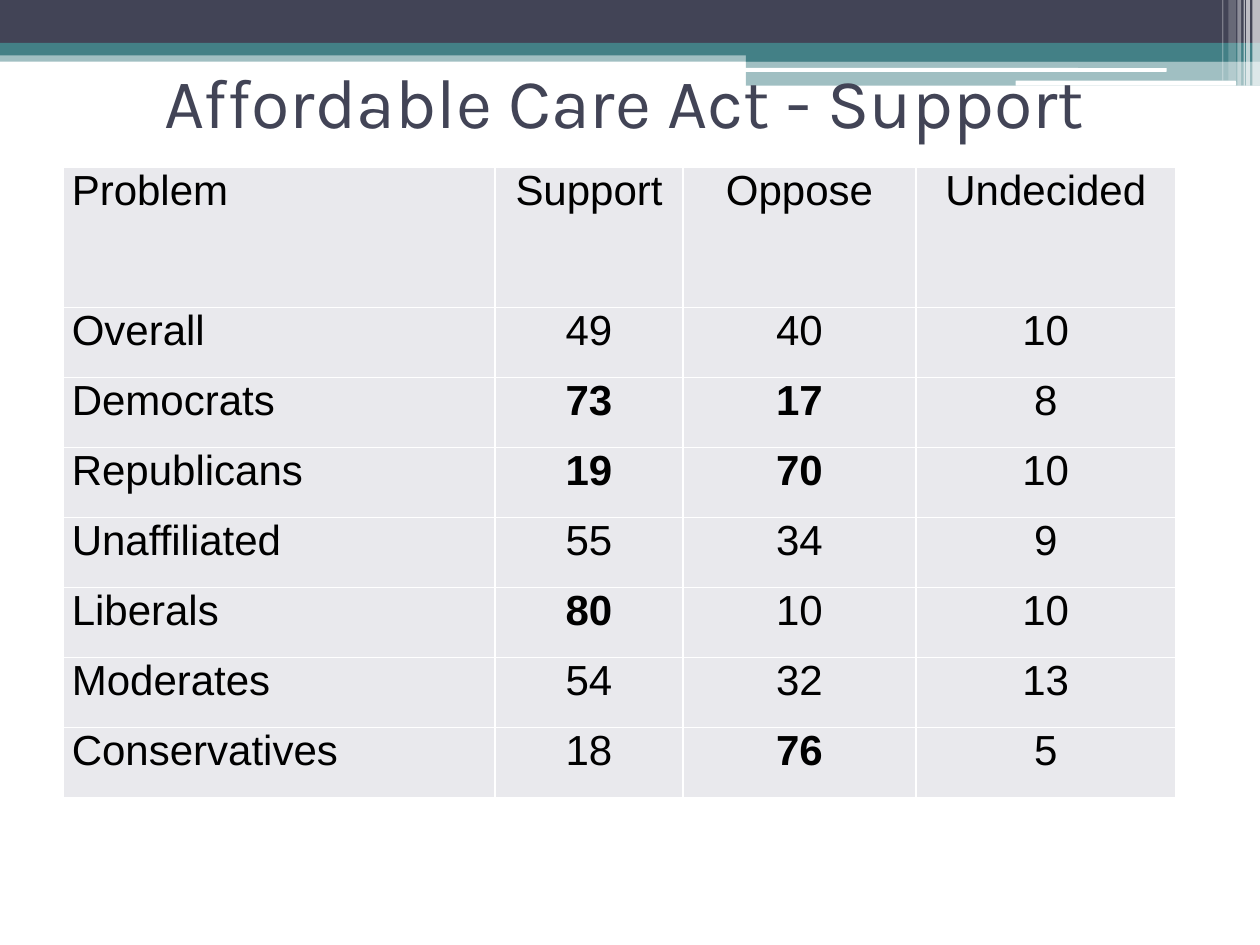
"""Builds a slide with a table of Affordable Care Act support by group."""
from lxml import etree
from pptx import Presentation
from pptx.dml.color import RGBColor
from pptx.enum.shapes import MSO_SHAPE
from pptx.enum.text import MSO_ANCHOR, PP_ALIGN
from pptx.oxml.ns import qn
from pptx.util import Inches, Pt

RECT, ROUND = MSO_SHAPE.RECTANGLE, MSO_SHAPE.ROUNDED_RECTANGLE
LEFT, CENTER = PP_ALIGN.LEFT, PP_ALIGN.CENTER
MIDDLE = MSO_ANCHOR.MIDDLE
NAVY = RGBColor(0x42, 0x44, 0x56)
TEAL = RGBColor(0x43, 0x80, 0x86)
WHITE = RGBColor(0xFF, 0xFF, 0xFF)
BLACK = RGBColor(0, 0, 0)
PALE = RGBColor(0xE9, 0xE9, 0xED)

TITLE = "Affordable Care Act - Support"
HEADER = ("Problem", "Support", "Oppose", "Undecided")
ROWS = [
    ("Overall", 49, 40, 10),
    ("Democrats", 73, 17, 8),
    ("Republicans", 19, 70, 10),
    ("Unaffiliated", 55, 34, 9),
    ("Liberals", 80, 10, 10),
    ("Moderates", 54, 32, 13),
    ("Conservatives", 18, 76, 5),
]
BOLD = {("Democrats", 1), ("Democrats", 2), ("Republicans", 1),
        ("Republicans", 2), ("Liberals", 1), ("Conservatives", 2)}
COL_WIDTHS = (3.43, 1.49, 1.85, 2.06)
TABLE_LEFT, TABLE_TOP, TABLE_HEIGHT, HEADER_HEIGHT = 0.5, 1.33, 5, 1.11

BANDS = [
    (RECT, 0, 0.4, 10, 0.09, TEAL, 50),
    (RECT, 0, 0, 10, 0.34, NAVY, 100),
    (RECT, 0, 0.34, 10, 0.1, TEAL, 100),
    (RECT, 5.92, 0.39, 4.08, 0.1, TEAL, 100),
    (RECT, 5.92, 0.48, 4.08, 0.2, TEAL, 50),
    (ROUND, 5.91, 0.54, 3.35, 0.03, WHITE, 100),
    (ROUND, 8.06, 0.64, 1.75, 0.04, WHITE, 100),
]
STRIPES = [
    (9.94, 0.06, 0.68, 65),
    (9.89, 0.03, 0.68, 65),
    (9.87, 0.01, 0.68, 60),
    (9.82, 0.03, 0.68, 40),
    (9.75, 0.06, 0.64, 20),
    (9.7, 0.01, 0.64, 30),
]


def add_text(tf, text, font="Arial", size=24, color=BLACK, bold=False, align=LEFT):
    p = tf.paragraphs[0]
    p.alignment = align
    r = p.add_run()
    r.text = text
    r.font.name, r.font.size, r.font.bold = font, Pt(size), bold
    r.font.color.rgb = color


def add_band(s, kind, x, y, w, h, color, opacity):
    sp = s.shapes.add_shape(kind, Inches(x), Inches(y), Inches(w), Inches(h))
    sp.shadow.inherit = False
    sp.line.fill.background()
    sp.fill.solid()
    sp.fill.fore_color.rgb = color
    if opacity < 100:
        clr = sp.fill._xPr.find(".//" + qn("a:srgbClr"))
        etree.SubElement(clr, qn("a:alpha"), val=str(opacity * 1000))


def add_borders(cell):
    tcPr = cell._tc.get_or_add_tcPr()
    for i, side in enumerate(("lnL", "lnR", "lnT", "lnB")):
        ln = etree.Element(qn("a:" + side), w=str(Pt(1)))
        fill = etree.SubElement(ln, qn("a:solidFill"))
        etree.SubElement(fill, qn("a:srgbClr"), val=str(WHITE))
        tcPr.insert(i, ln)


def add_support_table(s):
    rows = [HEADER] + ROWS
    frame = s.shapes.add_table(
        len(rows), len(HEADER), Inches(TABLE_LEFT), Inches(TABLE_TOP),
        Inches(sum(COL_WIDTHS)), Inches(TABLE_HEIGHT))
    table = frame.table
    for col, width in zip(table.columns, COL_WIDTHS):
        col.width = Inches(width)
    row_height = (TABLE_HEIGHT - HEADER_HEIGHT) / len(ROWS)
    for i, values in enumerate(rows):
        table.rows[i].height = Inches(row_height if i else HEADER_HEIGHT)
        for j, value in enumerate(values):
            cell = table.cell(i, j)
            cell.margin_left = cell.margin_right = Inches(0.07)
            cell.margin_top = cell.margin_bottom = 0
            cell.fill.solid()
            cell.fill.fore_color.rgb = PALE
            add_borders(cell)
            add_text(cell.text_frame, str(value), bold=(values[0], j) in BOLD,
                     align=CENTER if j else LEFT)


def main():
    prs = Presentation()
    prs.slide_width, prs.slide_height = Inches(10), Inches(7.5)
    s = prs.slides.add_slide(prs.slide_layouts[6])
    for band in BANDS:
        add_band(s, *band)
    for x, w, h, opacity in STRIPES:
        add_band(s, RECT, x, 0, w, h, WHITE, opacity)
    box = s.shapes.add_textbox(Inches(0.58), Inches(0.42), Inches(8.75), Inches(0.75))
    tf = box.text_frame
    tf.word_wrap = True
    tf.vertical_anchor = MIDDLE
    add_text(tf, TITLE, font="Karla", size=40, color=NAVY, align=CENTER)
    add_support_table(s)
    prs.save("out.pptx")


if __name__ == "__main__":
    main()
